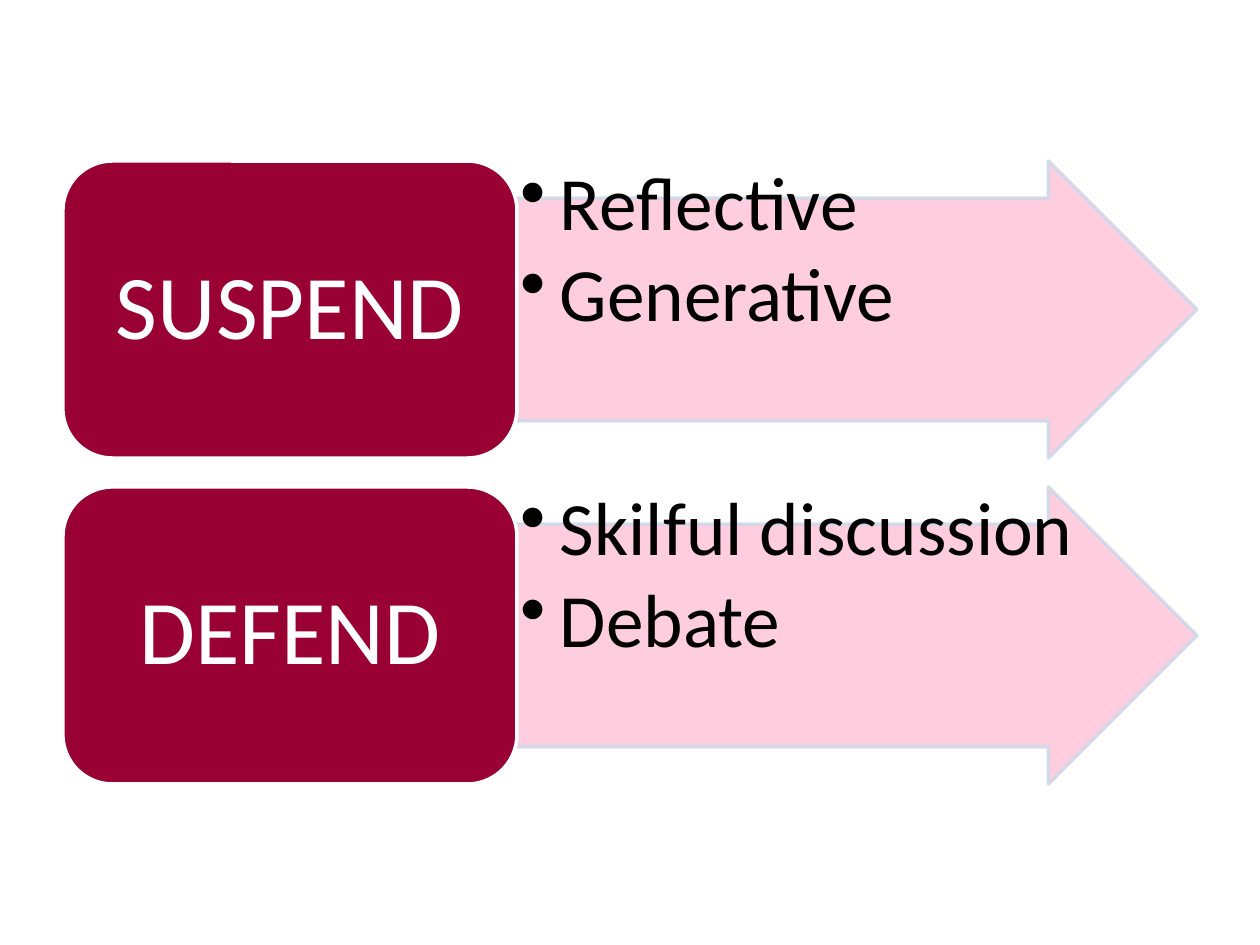
from lxml import etree
from pptx import Presentation
from pptx.dml.color import RGBColor
from pptx.enum.shapes import MSO_SHAPE
from pptx.enum.text import MSO_ANCHOR, PP_ALIGN
from pptx.oxml.ns import qn
from pptx.util import Emu, Pt

RIGHT_ARROW = MSO_SHAPE.RIGHT_ARROW
ROUNDED_RECTANGLE = MSO_SHAPE.ROUNDED_RECTANGLE
TOP = MSO_ANCHOR.TOP
MIDDLE = MSO_ANCHOR.MIDDLE
LEFT = PP_ALIGN.LEFT
CENTER = PP_ALIGN.CENTER

THEME = {
    "font": "Calibri",
    "title_size": Pt(52),
    "point_size": Pt(43),
    "line_width": Pt(2),
    "crimson": RGBColor.from_string("990033"),
    "pink": RGBColor.from_string("FFC9DB"),
    "outline": RGBColor.from_string("D0D8E8"),
    "white": RGBColor.from_string("FFFFFF"),
    "black": RGBColor.from_string("000000"),
}

EMU_PER_PX = 914400 / 126


def px(length):
    return Emu(round(length * EMU_PER_PX))


def write_lines(shape, lines, size, color, anchor, alignment, inset):
    frame = shape.text_frame
    frame.word_wrap = True
    frame.vertical_anchor = anchor
    frame.margin_left = frame.margin_right = px(inset)
    frame.margin_top = frame.margin_bottom = px(inset)
    frame.text = "\n".join(lines)
    for paragraph in frame.paragraphs:
        paragraph.alignment = alignment
        paragraph.line_spacing = 0.9
        paragraph.font.name = THEME["font"]
        paragraph.font.size = size
        paragraph.font.color.rgb = color
    return frame.paragraphs


presentation = Presentation()
presentation.slide_width = px(1260)
presentation.slide_height = px(945)
slide = presentation.slides.add_slide(presentation.slide_layouts[6])

ROWS = [
    ("SUSPEND", ["Reflective", "Generative"]),
    ("DEFEND", ["Skilful discussion", "Debate"]),
]
BOX_LEFT, BOX_WIDTH = 63, 454
ARROW_LEFT, ARROW_WIDTH = BOX_LEFT + BOX_WIDTH, 680
FIRST_TOP, ROW_HEIGHT, ROW_GAP = 161, 297, 29
BULLET_INDENT = 39

for row, (title, points) in enumerate(ROWS):
    top = FIRST_TOP + row * (ROW_HEIGHT + ROW_GAP)
    arrow_area = px(ARROW_LEFT), px(top), px(ARROW_WIDTH), px(ROW_HEIGHT)

    arrow = slide.shapes.add_shape(RIGHT_ARROW, *arrow_area)
    arrow.shadow.inherit = False
    arrow.adjustments[0] = 0.75
    arrow.adjustments[1] = 0.5
    arrow.fill.solid()
    arrow.fill.fore_color.rgb = THEME["pink"]
    arrow.line.color.rgb = THEME["outline"]
    arrow.line.width = THEME["line_width"]
    for color in arrow._element.spPr.iter(qn("a:srgbClr")):
        etree.SubElement(color, qn("a:alpha"), val="90000")

    points_box = slide.shapes.add_textbox(*arrow_area)
    paragraphs = write_lines(points_box, points, THEME["point_size"],
                             THEME["black"], TOP, LEFT, 4)
    for paragraph in paragraphs:
        paragraph.level = 1
        paragraph.space_after = Pt(6)
        properties = paragraph._p.get_or_add_pPr()
        properties.set("marL", str(px(BULLET_INDENT)))
        properties.set("indent", str(-px(BULLET_INDENT)))
        bullet = etree.Element(qn("a:buChar"), char="•")
        properties.find(qn("a:defRPr")).addprevious(bullet)

    title_box = slide.shapes.add_shape(ROUNDED_RECTANGLE, px(BOX_LEFT), px(top),
                                       px(BOX_WIDTH), px(ROW_HEIGHT))
    title_box.shadow.inherit = False
    title_box.fill.solid()
    title_box.fill.fore_color.rgb = THEME["crimson"]
    title_box.line.color.rgb = THEME["white"]
    title_box.line.width = THEME["line_width"]
    write_lines(title_box, [title], THEME["title_size"],
                THEME["white"], MIDDLE, CENTER, 14)

presentation.save("out.pptx")
